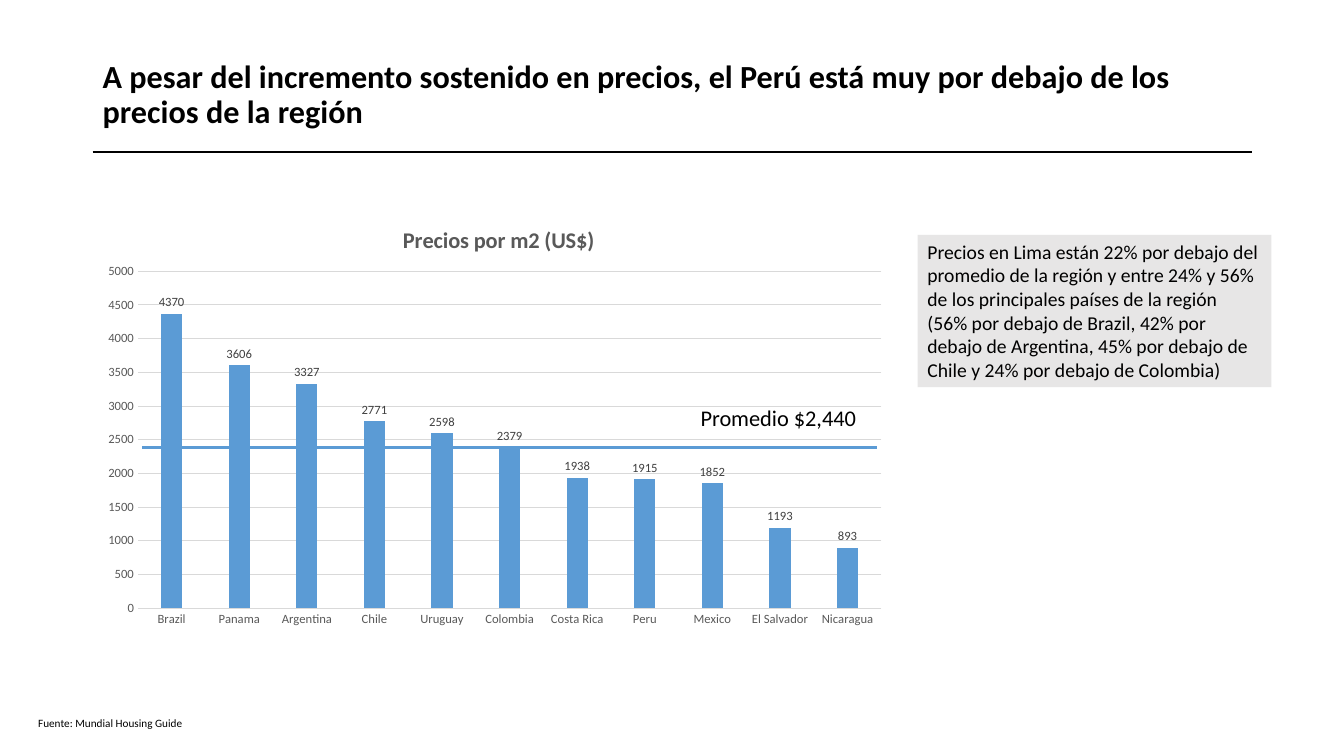
from lxml import etree
from pptx import Presentation
from pptx.chart.data import CategoryChartData
from pptx.dml.color import RGBColor
from pptx.enum import chart as charts, shapes, text
from pptx.oxml import ns
from pptx.util import Inches, Pt

BLACK = RGBColor(0x00, 0x00, 0x00)
BLUE = RGBColor(0x5B, 0x9B, 0xD5)
PALE_GRAY = RGBColor(0xE7, 0xE6, 0xE6)
GRID_GRAY = RGBColor(0xD9, 0xD9, 0xD9)
AXIS_GRAY = RGBColor(0x59, 0x59, 0x59)
LABEL_GRAY = RGBColor(0x40, 0x40, 0x40)
FONT = "Calibri"

PRICES = {
    "Brazil": 4370, "Panama": 3606, "Argentina": 3327, "Chile": 2771,
    "Uruguay": 2598, "Colombia": 2379, "Costa Rica": 1938, "Peru": 1915,
    "Mexico": 1852, "El Salvador": 1193, "Nicaragua": 893,
}


def style_font(font, size, color=BLACK, bold=False):
    font.name = FONT
    font.size = Pt(size)
    font.color.rgb = color
    font.bold = bold


def write_text(shape, content, size, bold=False):
    frame = shape.text_frame
    frame.word_wrap = True
    paragraph = frame.paragraphs[0]
    paragraph.text = content
    paragraph.alignment = text.PP_ALIGN.LEFT
    style_font(paragraph.font, size, bold=bold)
    return frame


def add_text(slide, box, content, size, bold=False):
    shape = slide.shapes.add_textbox(*map(Inches, box))
    return write_text(shape, content, size, bold)


def add_rule(slide, left, top, width, color):
    line = slide.shapes.add_connector(
        shapes.MSO_CONNECTOR.STRAIGHT,
        Inches(left), Inches(top), Inches(left + width), Inches(top))
    line.line.color.rgb = color
    line.line.width = Pt(1.5)
    etree.SubElement(line._element.spPr, ns.qn("a:effectLst"))


def set_layout(parent, position, **fractions):
    """Place a chart part by fractions of the chart area."""
    layout = parent.find(ns.qn("c:layout"))
    if layout is None:
        layout = etree.Element(ns.qn("c:layout"))
        parent.insert(position, layout)
    manual = etree.SubElement(layout, ns.qn("c:manualLayout"))
    if "w" in fractions:
        etree.SubElement(manual, ns.qn("c:layoutTarget")).set("val", "inner")
    for axis in ("x", "y"):
        etree.SubElement(manual, ns.qn(f"c:{axis}Mode")).set("val", "edge")
    for name, value in fractions.items():
        etree.SubElement(manual, ns.qn(f"c:{name}")).set("val", str(value))


def add_heading(slide, left, top, width, height):
    frame = add_text(
        slide, (left, top, width, height),
        "A pesar del incremento sostenido en precios, el Perú está muy por "
        "debajo de los precios de la región", 23, bold=True)
    frame.vertical_anchor = text.MSO_ANCHOR.MIDDLE
    frame.paragraphs[0].line_spacing = 0.9
    add_rule(slide, left, top + height + 0.01, width, BLACK)


def add_price_chart(slide, left, top, width, height):
    data = CategoryChartData()
    data.categories = list(PRICES)
    data.add_series("Series 1", list(PRICES.values()))
    chart = slide.shapes.add_chart(
        charts.XL_CHART_TYPE.COLUMN_CLUSTERED,
        *map(Inches, (left, top, width, height)), data).chart
    style_font(chart.font, 10)
    chart.has_legend = False

    # Title
    title = chart.chart_title
    paragraph = title.text_frame.paragraphs[0]
    paragraph.text = "Precios por m2 (US$)"
    style_font(paragraph.font, 16, AXIS_GRAY, bold=True)
    title.include_in_layout = False
    set_layout(title._element, 1, x=0.38, y=0.04)
    set_layout(chart._chartSpace.chart.plotArea, 0,
               x=0.056, y=0.157, w=0.923, h=0.781)

    # Axes
    for axis in (chart.category_axis, chart.value_axis):
        axis.major_tick_mark = charts.XL_TICK_MARK.NONE
        axis.minor_tick_mark = charts.XL_TICK_MARK.NONE
        style_font(axis.tick_labels.font, 9, AXIS_GRAY)
    values = chart.value_axis
    values.minimum_scale, values.maximum_scale = 0, 5000
    values.major_unit = 500
    values.format.line.fill.background()
    for line in (chart.category_axis.format.line,
                 values.major_gridlines.format.line):
        line.color.rgb = GRID_GRAY
        line.width = Pt(0.75)

    # Columns and their labels
    plot = chart.plots[0]
    plot.gap_width, plot.overlap = 219, -27
    plot.vary_by_categories = False
    series = plot.series[0]
    series.format.fill.solid()
    series.format.fill.fore_color.rgb = BLUE
    labels = series.data_labels
    labels.show_value = True
    labels.position = charts.XL_LABEL_POSITION.OUTSIDE_END
    style_font(labels.font, 9, LABEL_GRAY)

    # Regional average
    add_rule(slide, left + 0.49, top + 2.42, 7.29, BLUE)
    add_text(slide, (left + 5.93, top + 1.94, 1.77, 0.37),
             "Promedio $2,440", 16)


def add_comment_box(slide, left, top, width, height):
    shape = slide.shapes.add_shape(
        shapes.MSO_SHAPE.RECTANGLE, *map(Inches, (left, top, width, height)))
    shape.shadow.inherit = False
    shape.fill.solid()
    shape.fill.fore_color.rgb = PALE_GRAY
    shape.line.fill.background()
    frame = write_text(
        shape,
        "Precios en Lima están 22% por debajo del promedio de la región y "
        "entre 24% y 56% de los principales países de la región (56% por "
        "debajo de Brazil, 42% por debajo de Argentina, 45% por debajo de "
        "Chile y 24% por debajo de Colombia)", 14)
    frame.vertical_anchor = text.MSO_ANCHOR.TOP


def main():
    presentation = Presentation()
    presentation.slide_width = Inches(13.33)
    presentation.slide_height = Inches(7.5)
    slide = presentation.slides.add_slide(presentation.slide_layouts[6])
    add_heading(slide, 0.92, 0.4, 11.5, 1.1)
    add_price_chart(slide, 0.92, 2.02, 7.99, 4.28)
    add_comment_box(slide, 9.1, 2.33, 3.51, 1.51)
    add_text(slide, (0.28, 7.06, 4.23, 0.24), "Fuente: Mundial Housing Guide", 8)
    presentation.save("out.pptx")


if __name__ == "__main__":
    main()
